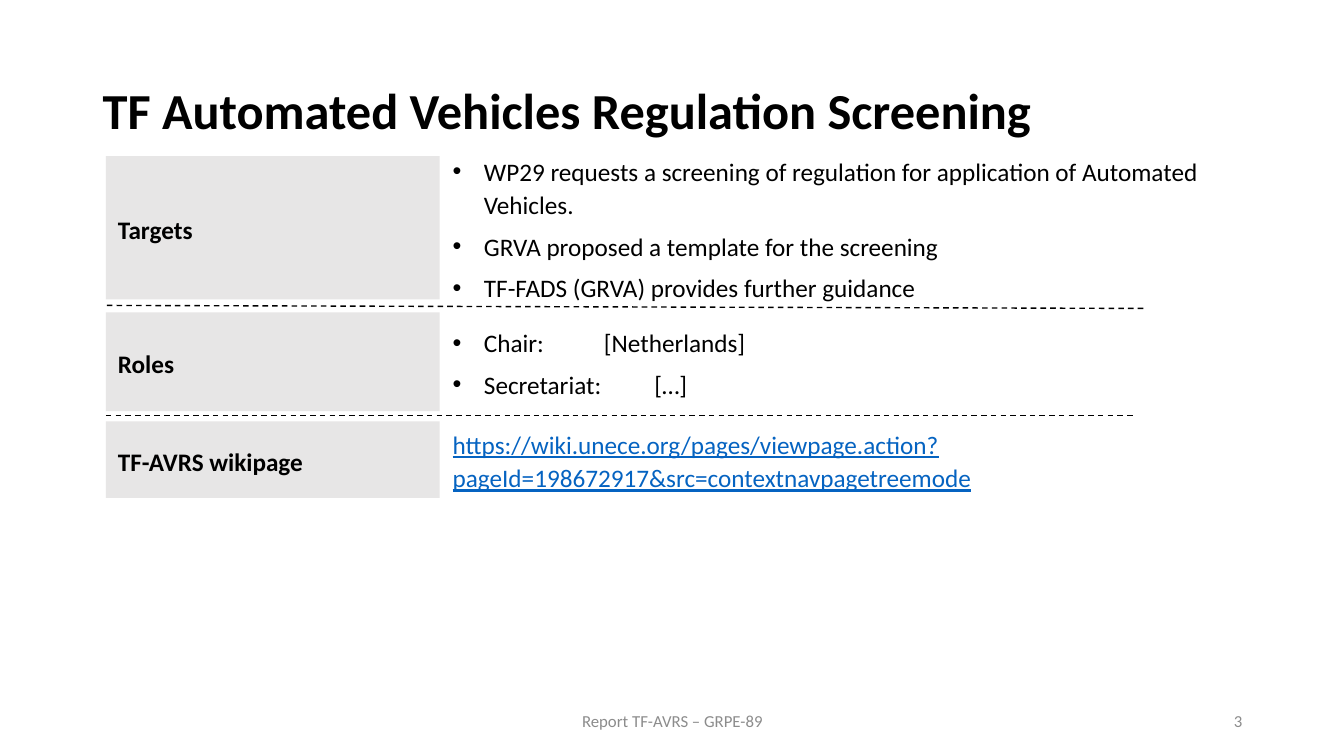
"""Build the slide on the task force for automated vehicles regulation screening."""
from pptx import Presentation
from pptx.dml.color import RGBColor
from pptx.enum.dml import MSO_LINE
from pptx.enum.shapes import MSO_CONNECTOR, MSO_SHAPE
from pptx.enum.text import MSO_ANCHOR, PP_ALIGN
from pptx.oxml.ns import qn
from pptx.util import Inches, Pt

BLACK = RGBColor(0x00, 0x00, 0x00)
PALE = RGBColor(0xE7, 0xE6, 0xE6)
GREY = RGBColor(0x8C, 0x8C, 0x8C)
BLUE = RGBColor(0x05, 0x63, 0xC1)
LEFT, CENTER, RIGHT = PP_ALIGN.LEFT, PP_ALIGN.CENTER, PP_ALIGN.RIGHT
MIDDLE = MSO_ANCHOR.MIDDLE
RECT = MSO_SHAPE.RECTANGLE
STRAIGHT = MSO_CONNECTOR.STRAIGHT
DASH = MSO_LINE.DASH

LABEL_X, LABEL_W, BODY_X = 1.05, 3.31, 4.49
INDENT = Inches(0.31)

ROWS = [
    (1.55, 1.42, 7.43, "Targets", [
        "WP29 requests a screening of regulation for application of Automated Vehicles.",
        "GRVA proposed a template for the screening",
        "TF-FADS (GRVA) provides further guidance",
    ]),
    (3.1, 0.98, 6.78, "Roles", ["Chair: \t\t[Netherlands]", "Secretariat: \t[…]"]),
]
WIKI = "https://wiki.unece.org/pages/viewpage.action?pageId=198672917&src=contextnavpagetreemode"


def write(shape, lines, size=18, color=BLACK, bold=False, align=LEFT,
          pad=(0, 0), lead=1.1, gap=6):
    """Fill a shape with styled paragraphs."""
    frame = shape.text_frame
    frame.word_wrap = True
    frame.vertical_anchor = MIDDLE
    frame.margin_left = frame.margin_right = Inches(pad[0])
    frame.margin_top = frame.margin_bottom = Inches(pad[1])
    frame.text = "\n".join(lines)
    for para in frame.paragraphs:
        para.alignment = align
        para.line_spacing = lead
        para.space_before = Pt(gap)
        for run in para.runs:
            run.font.name = "Calibri"
            run.font.size = Pt(size)
            run.font.bold = bold
            run.font.color.rgb = color


def add_text(slide, x, y, w, h, lines, **style):
    """Add a text box and return it."""
    box = slide.shapes.add_textbox(Inches(x), Inches(y), Inches(w), Inches(h))
    write(box, lines, **style)
    return box


def add_label(slide, y, h, text):
    """Add a grey row label."""
    label = slide.shapes.add_shape(
        RECT, Inches(LABEL_X), Inches(y), Inches(LABEL_W), Inches(h))
    label.shadow.inherit = False
    label.fill.solid()
    label.fill.fore_color.rgb = PALE
    label.line.fill.background()
    write(label, [text], bold=True, pad=(0.12, 0.08))


def add_list(slide, y, w, h, lines):
    """Add a bulleted list beside a label."""
    box = add_text(slide, BODY_X, y, w, h, lines)
    for para in box.text_frame.paragraphs:
        props = para._p.get_or_add_pPr()
        props.set("marL", str(INDENT))
        props.set("indent", str(-INDENT))
        font = props.makeelement(qn("a:buFont"), {"typeface": "Arial"})
        mark = props.makeelement(qn("a:buChar"), {"char": "•"})
        props.extend([font, mark])


def add_link(slide, y, w, h, text):
    """Add an underlined web address beside a label."""
    box = add_text(slide, BODY_X, y, w, h, [text], color=BLUE)
    box.text_frame.paragraphs[0].runs[0].font.underline = True


def add_rule(slide, x1, y1, x2, y2):
    """Add a dashed line between two rows."""
    rule = slide.shapes.add_connector(
        STRAIGHT, Inches(x1), Inches(y1), Inches(x2), Inches(y2))
    rule.line.color.rgb = BLACK
    rule.line.width = Pt(1)
    rule.line.dash_style = DASH
    props = rule._element.spPr
    props.append(props.makeelement(qn("a:effectLst"), {}))


def main():
    """Draw and save the slide."""
    deck = Presentation()
    deck.slide_width, deck.slide_height = Inches(13.33), Inches(7.5)
    slide = deck.slides.add_slide(deck.slide_layouts[6])
    add_text(slide, 0.92, 0.4, 11.5, 1.45,
             ["TF Automated Vehicles Regulation Screening"],
             size=36, bold=True, pad=(0.1, 0.05), lead=0.9, gap=0)
    add_rule(slide, 1.06, 3.03, 11.35, 3.06)
    add_rule(slide, 1.05, 4.12, 11.26, 4.12)
    for y, h, w, label, lines in ROWS:
        add_list(slide, y, w, h, lines)
        add_label(slide, y, h, label)
    add_link(slide, 4.18, 7.03, 0.76, WIKI)
    add_label(slide, 4.18, 0.76, "TF-AVRS wikipage")
    footer = {"size": 12, "color": GREY, "pad": (0.1, 0.05), "lead": 1.0, "gap": 0}
    add_text(slide, 9.42, 6.95, 3, 0.4, ["3"], align=RIGHT, **footer)
    add_text(slide, 4.42, 6.95, 4.5, 0.4, ["Report TF-AVRS – GRPE-89"],
             align=CENTER, **footer)
    deck.save("out.pptx")


if __name__ == "__main__":
    main()
